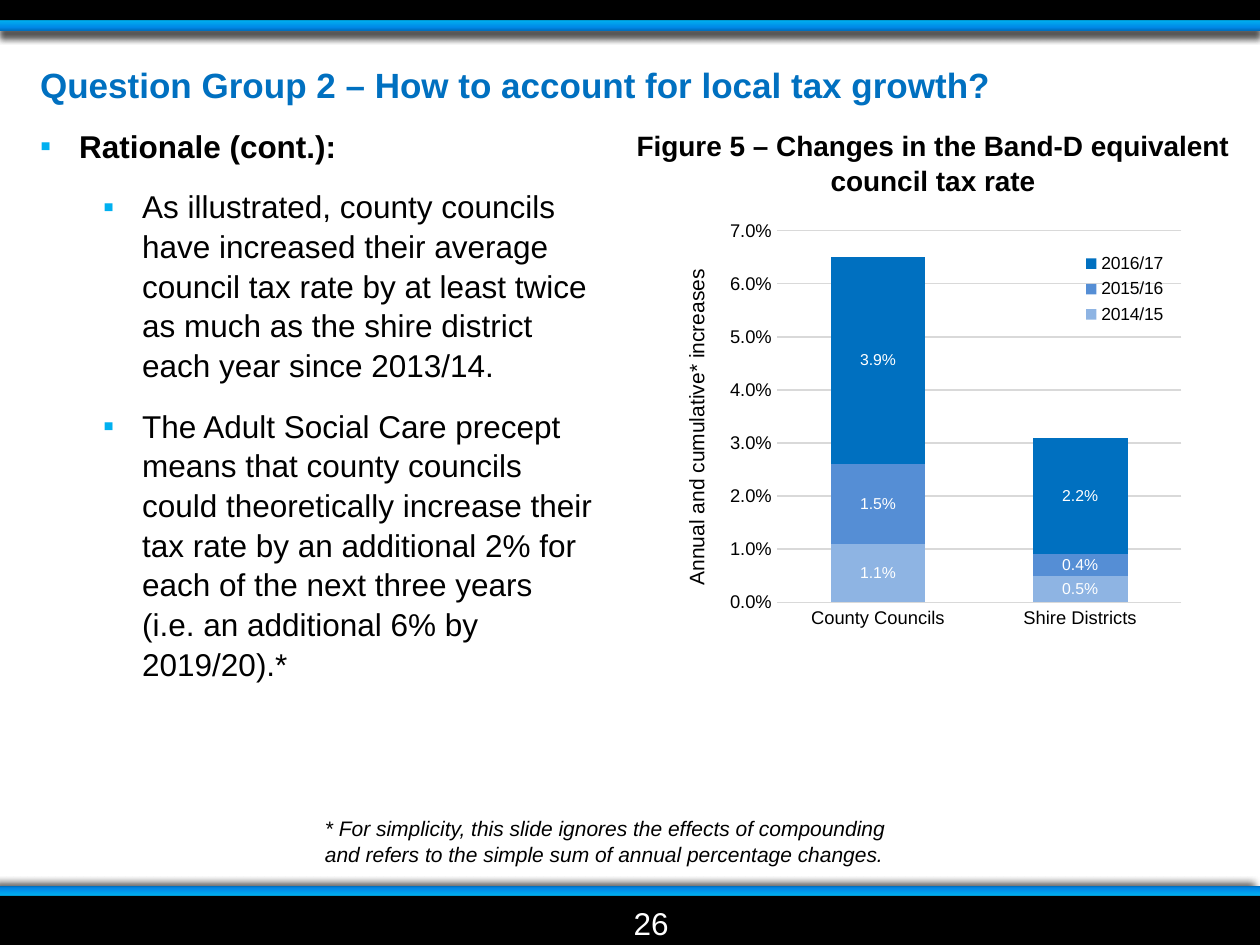
from typing import NamedTuple

from lxml import etree
from pptx import Presentation
from pptx.chart.data import CategoryChartData
from pptx.dml.color import RGBColor
from pptx.enum.chart import XL_CHART_TYPE, XL_LEGEND_POSITION, XL_TICK_MARK
from pptx.enum.shapes import MSO_SHAPE
from pptx.enum.text import PP_ALIGN
from pptx.oxml import parse_xml
from pptx.oxml.ns import nsdecls, qn
from pptx.util import Inches, Pt

COLORS = {
    "black": "000000", "white": "FFFFFF", "blue": "0070C0", "sky": "00B0F0",
    "azure": "0087E6", "mid": "558ED5", "pale": "8EB4E3", "grid": "D9D9D9",
}
FONT = "Arial"
BAR_STOPS = ((0, "sky"), (75, "azure"), (100, "blue"))


class Box(NamedTuple):
    left: float
    top: float
    width: float
    height: float

    def lengths(self):
        return [Inches(side) for side in self]


class Line(NamedTuple):
    text: str
    size: float
    color: str = "black"
    bold: bool = False
    italic: bool = False
    space: float = 0
    indent: float = 0
    bullet: bool = False
    align: PP_ALIGN = PP_ALIGN.LEFT


class Bar(NamedTuple):
    box: Box
    rotation: int
    shadow_angle: int


class Year(NamedTuple):
    name: str
    rises: tuple
    color: str


def rgb(name: str) -> RGBColor:
    return RGBColor.from_string(COLORS[name])


def style_font(font, size: float, color: str = "black") -> None:
    font.name, font.size = FONT, Pt(size)
    font.bold = False
    font.color.rgb = rgb(color)


def add_block(slide, box: Box, color: str = "black"):
    block = slide.shapes.add_shape(MSO_SHAPE.RECTANGLE, *box.lengths())
    block.shadow.inherit = False
    block.fill.solid()
    block.fill.fore_color.rgb = rgb(color)
    block.line.fill.background()
    return block


def add_bar(slide, bar: Bar) -> None:
    """Add a blue gradient strip with a soft shadow."""
    strip = add_block(slide, bar.box)
    strip.rotation = bar.rotation
    stops = "".join(
        f'<a:gs pos="{pos * 1000}"><a:srgbClr val="{COLORS[color]}"/></a:gs>'
        for pos, color in BAR_STOPS)
    properties = strip.element.spPr
    properties.replace(properties.find(qn("a:solidFill")), parse_xml(
        f'<a:gradFill {nsdecls("a")} rotWithShape="1"><a:gsLst>{stops}</a:gsLst>'
        '<a:lin ang="5400000" scaled="0"/></a:gradFill>'))
    properties.find(qn("a:effectLst")).append(parse_xml(
        f'<a:outerShdw {nsdecls("a")} blurRad="{Pt(4)}" dist="{Pt(4)}" '
        f'dir="{bar.shadow_angle * 60000}" algn="ctr" rotWithShape="0">'
        f'<a:srgbClr val="{COLORS["black"]}"><a:alpha val="43000"/></a:srgbClr>'
        '</a:outerShdw>'))


def add_bullet(paragraph, indent: float) -> None:
    properties = paragraph._p.get_or_add_pPr()
    properties.set("marL", str(Inches(indent)))
    properties.set("indent", str(Inches(-0.31)))
    color = etree.SubElement(properties, qn("a:buClr"))
    etree.SubElement(color, qn("a:srgbClr"), val=COLORS["sky"])
    etree.SubElement(properties, qn("a:buFont"), typeface=FONT)
    etree.SubElement(properties, qn("a:buChar"), char="▪")


def add_text(slide, box: Box, *lines: Line) -> None:
    frame = slide.shapes.add_textbox(*box.lengths()).text_frame
    frame.word_wrap = True
    for index, line in enumerate(lines):
        paragraph = frame.add_paragraph() if index else frame.paragraphs[0]
        paragraph.text = line.text
        if line.bullet:
            add_bullet(paragraph, line.indent)
        paragraph.alignment = line.align
        paragraph.line_spacing = 1.05
        paragraph.space_before = Pt(line.space if index else 0)
        paragraph.space_after = Pt(line.space)
        style_font(paragraph.font, line.size, line.color)
        paragraph.font.bold, paragraph.font.italic = line.bold, line.italic


def set_layout(parent, index: int, target: str = "", **places: float) -> None:
    """Place a chart part by fractions of the chart's size."""
    old = parent.find(qn("c:layout"))
    if old is not None:
        parent.remove(old)
    layout = etree.Element(qn("c:layout"))
    manual = etree.SubElement(layout, qn("c:manualLayout"))
    if target:
        etree.SubElement(manual, qn("c:layoutTarget"), val=target)
    for mode in ("xMode", "yMode"):
        etree.SubElement(manual, qn(f"c:{mode}"), val="edge")
    for key, value in places.items():
        etree.SubElement(manual, qn(f"c:{key}"), val=str(value))
    parent.insert(index, layout)


def add_tax_chart(slide, box: Box, councils: list, years: list) -> None:
    data = CategoryChartData(number_format="0.0%")
    data.categories = councils
    for year in years:
        data.add_series(year.name, year.rises)
    chart = slide.shapes.add_chart(
        XL_CHART_TYPE.COLUMN_STACKED, *box.lengths(), data).chart
    style_font(chart.font, 10)
    chart.has_title = False

    plot = chart.plots[0]
    plot.gap_width, plot.overlap = 113, 100
    plot.vary_by_categories = False
    for series, year in zip(plot.series, years):
        series.format.fill.solid()
        series.format.fill.fore_color.rgb = rgb(year.color)
        labels = series.data_labels
        labels.show_value = True
        labels.number_format, labels.number_format_is_linked = "0.0%", False
        style_font(labels.font, 9, "white")

    rates = chart.value_axis
    for axis in (chart.category_axis, rates):
        axis.major_tick_mark = axis.minor_tick_mark = XL_TICK_MARK.NONE
        style_font(axis.tick_labels.font, 10.5)
    rates.minimum_scale, rates.maximum_scale, rates.major_unit = 0, 0.07, 0.01
    rates.tick_labels.number_format = "0.0%"
    rates.tick_labels.number_format_is_linked = False
    rates.format.line.fill.background()
    for line in (chart.category_axis.format.line, rates.major_gridlines.format.line):
        line.color.rgb, line.width = rgb("grid"), Pt(0.75)

    caption = rates.axis_title.text_frame
    caption.text = "Annual and cumulative* increases"
    style_font(caption.paragraphs[0].font, 12)
    turn = caption._txBody.find(qn("a:bodyPr"))
    turn.set("rot", "-5400000")
    turn.set("vert", "horz")

    chart.has_legend = True
    chart.legend.position = XL_LEGEND_POSITION.RIGHT
    chart.legend.include_in_layout = True
    style_font(chart.legend.font, 10)

    set_layout(rates.axis_title._element, 1, x=0.02, y=0.13)
    set_layout(chart.legend._element, 1, x=0.76, y=0.09, w=0.17, h=0.19)
    set_layout(chart._chartSpace.chart.plotArea, 0, "inner",
               x=0.2, y=0.05, w=0.75, h=0.86)


def main() -> None:
    deck = Presentation()
    deck.slide_width, deck.slide_height = Inches(10), Inches(7.5)
    slide = deck.slides.add_slide(deck.slide_layouts[6])

    bottom_bar = Bar(Box(0, 7.03, 10, 0.08), 180, 199)
    top_bar = Bar(Box(0, 0.16, 10, 0.08), 0, 92)
    for bar in (bottom_bar, top_bar) * 2:
        add_bar(slide, bar)
    for band in (Box(0, 0, 10, 0.16), Box(0, 7.11, 10, 0.39)):
        add_block(slide, band)

    add_text(slide, Box(4.93, 7.11, 2.33, 0.39), Line("26", 18, "white"))
    add_text(slide, Box(0.22, 0.44, 9.58, 0.44), Line(
        "Question Group 2 – How to account for local tax growth?",
        20, "blue", bold=True, space=6))
    add_text(
        slide, Box(0.22, 0.94, 4.59, 4.38),
        Line("Rationale (cont.):", 18, bold=True, space=6, indent=0.31, bullet=True),
        *(Line(point, 18, space=6, indent=0.81, bullet=True) for point in (
            "As illustrated, county councils have increased their average council "
            "tax rate by at least twice as much as the shire district each year "
            "since 2013/14.",
            "The Adult Social Care precept means that county councils could "
            "theoretically increase their tax rate by an additional 2% for each of "
            "the next three years (i.e. an additional 6% by 2019/20).*")))
    add_text(slide, Box(4.81, 0.96, 5.19, 0.64), Line(
        "Figure 5 – Changes in the Band-D equivalent council tax rate",
        16, bold=True, space=6, align=PP_ALIGN.CENTER))
    add_tax_chart(
        slide, Box(5.31, 1.66, 4.28, 3.43), ["County Councils", "Shire Districts"],
        [Year("2014/15", (0.011, 0.005), "pale"),
         Year("2015/16", (0.015, 0.004), "mid"),
         Year("2016/17", (0.039, 0.022), "blue")])
    add_text(slide, Box(2.48, 6.41, 4.88, 0.5), Line(
        "* For simplicity, this slide ignores the effects of compounding and refers "
        "to the simple sum of annual percentage changes.", 12, italic=True))
    deck.save("out.pptx")


if __name__ == "__main__":
    main()
